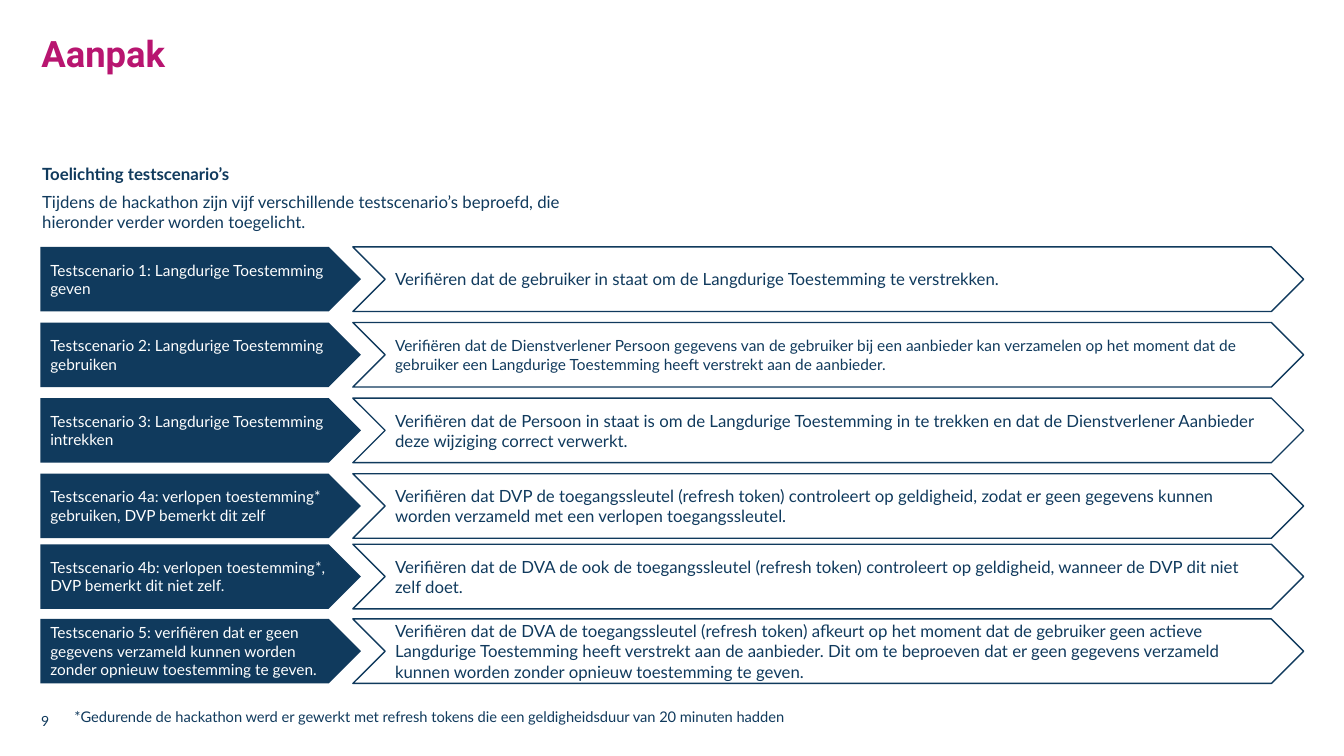
from dataclasses import dataclass

import pptx
import pptx.dml.color
import pptx.enum.shapes
import pptx.enum.text
import pptx.util

ANCHOR = pptx.enum.text.MSO_ANCHOR
SHAPE = pptx.enum.shapes.MSO_SHAPE


@dataclass(frozen=True)
class Theme:
    navy: str = "103A5D"
    magenta: str = "B81570"
    white: str = "FFFFFF"
    heading_font: str = "Roboto"
    body_font: str = "Lato"
    title_size: float = 26
    body_size: float = 12
    label_size: float = 11
    note_size: float = 10.5
    number_size: float = 10


@dataclass(frozen=True)
class Box:
    left: int
    top: int
    width: int
    height: int


@dataclass(frozen=True)
class Scenario:
    top: int
    label: str
    goal: str
    goal_size: float


THEME = Theme()
EMU_PER_PX = 9144
LABEL_LEFT, LABEL_WIDTH = 40, 318
GOAL_LEFT, GOAL_WIDTH = 350, 943
ROW_HEIGHT = 64

SCENARIOS = [
    Scenario(
        245,
        "Testscenario 1: Langdurige Toestemming geven",
        "Verifiëren dat de gebruiker in staat om de Langdurige Toestemming te verstrekken.",
        THEME.body_size,
    ),
    Scenario(
        320,
        "Testscenario 2: Langdurige Toestemming gebruiken",
        "Verifiëren dat de Dienstverlener Persoon gegevens van de gebruiker bij een aanbieder kan "
        "verzamelen op het moment dat de gebruiker een Langdurige Toestemming heeft verstrekt aan de aanbieder.",
        THEME.label_size,
    ),
    Scenario(
        395,
        "Testscenario 3: Langdurige Toestemming intrekken",
        "Verifiëren dat de Persoon in staat is om de Langdurige Toestemming in te trekken en dat de "
        "Dienstverlener Aanbieder deze wijziging correct verwerkt.",
        THEME.body_size,
    ),
    Scenario(
        470,
        "Testscenario 4a: verlopen toestemming* gebruiken, DVP bemerkt dit zelf",
        "Verifiëren dat DVP de toegangssleutel (refresh token) controleert op geldigheid, zodat er geen "
        "gegevens kunnen worden verzameld met een verlopen toegangssleutel.",
        THEME.body_size,
    ),
    Scenario(
        540,
        "Testscenario 4b: verlopen toestemming*, DVP bemerkt dit niet zelf.",
        "Verifiëren dat de DVA de ook de toegangssleutel (refresh token) controleert op geldigheid, "
        "wanneer de DVP dit niet zelf doet.",
        THEME.body_size,
    ),
    Scenario(
        614,
        "Testscenario 5: verifiëren dat er geen gegevens verzameld kunnen worden zonder opnieuw "
        "toestemming te geven.",
        "Verifiëren dat de DVA de toegangssleutel (refresh token) afkeurt op het moment dat de gebruiker "
        "geen actieve Langdurige Toestemming heeft verstrekt aan de aanbieder. Dit om te beproeven dat er "
        "geen gegevens verzameld kunnen worden zonder opnieuw toestemming te geven.",
        THEME.body_size,
    ),
]


def px(length: int) -> pptx.util.Emu:
    return pptx.util.Emu(length * EMU_PER_PX)


def rgb(color: str) -> pptx.dml.color.RGBColor:
    return pptx.dml.color.RGBColor.from_string(color)


def place(box: Box) -> tuple:
    return px(box.left), px(box.top), px(box.width), px(box.height)


def write(paragraph, text: str, *, size: float, color: str = THEME.navy,
          font: str = THEME.body_font, bold: bool = False,
          space_after: float = 0, line_spacing: float = 1.0) -> None:
    paragraph.alignment = pptx.enum.text.PP_ALIGN.LEFT
    paragraph.space_after = pptx.util.Pt(space_after)
    paragraph.line_spacing = line_spacing
    run = paragraph.add_run()
    run.text = text
    run.font.name = font
    run.font.size = pptx.util.Pt(size)
    run.font.bold = bold
    run.font.color.rgb = rgb(color)


def add_title(slide, box: Box, text: str) -> None:
    title = slide.shapes.title
    title.left, title.top, title.width, title.height = place(box)
    frame = title.text_frame
    frame.auto_size = pptx.enum.text.MSO_AUTO_SIZE.NONE
    frame.vertical_anchor = ANCHOR.TOP
    write(frame.paragraphs[0], text, size=THEME.title_size, color=THEME.magenta,
          font=THEME.heading_font, bold=True, line_spacing=0.9)


def add_text_frame(slide, box: Box, anchor=ANCHOR.TOP, wrap: bool = True):
    frame = slide.shapes.add_textbox(*place(box)).text_frame
    frame.word_wrap = wrap
    frame.vertical_anchor = anchor
    return frame


def add_arrow(slide, kind, box: Box, text: str, *, size: float, color: str, filled: bool) -> None:
    arrow = slide.shapes.add_shape(kind, *place(box))
    arrow.shadow.inherit = False
    if filled:
        arrow.fill.solid()
        arrow.fill.fore_color.rgb = rgb(THEME.navy)
        arrow.line.fill.background()
    else:
        arrow.fill.background()
        arrow.line.color.rgb = rgb(THEME.navy)
        arrow.line.width = pptx.util.Pt(1)
    frame = arrow.text_frame
    frame.word_wrap = True
    frame.vertical_anchor = ANCHOR.MIDDLE
    frame.margin_top = frame.margin_bottom = 0
    write(frame.paragraphs[0], text, size=size, color=color)


def add_scenario(slide, scenario: Scenario) -> None:
    add_arrow(slide, SHAPE.PENTAGON, Box(LABEL_LEFT, scenario.top, LABEL_WIDTH, ROW_HEIGHT),
              scenario.label, size=THEME.label_size, color=THEME.white, filled=True)
    add_arrow(slide, SHAPE.CHEVRON, Box(GOAL_LEFT, scenario.top, GOAL_WIDTH, ROW_HEIGHT),
              scenario.goal, size=scenario.goal_size, color=THEME.navy, filled=False)


def main() -> None:
    presentation = pptx.Presentation()
    presentation.slide_width, presentation.slide_height = px(1333), px(750)
    slide = presentation.slides.add_slide(presentation.slide_layouts.get_by_name("Title Only"))

    add_title(slide, Box(31, 31, 1270, 106), "Aanpak")
    intro = add_text_frame(slide, Box(32, 157, 586, 519))
    write(intro.paragraphs[0], "Toelichting testscenario’s",
          size=THEME.body_size, bold=True, space_after=6)
    write(intro.add_paragraph(),
          "Tijdens de hackathon zijn vijf verschillende testscenario’s beproefd, "
          "die hieronder verder worden toegelicht.",
          size=THEME.body_size, space_after=6)
    page_number = add_text_frame(slide, Box(31, 695, 300, 40), ANCHOR.MIDDLE)
    write(page_number.paragraphs[0], "9", size=THEME.number_size)

    for scenario in SCENARIOS:
        add_scenario(slide, scenario)

    footnote = add_text_frame(slide, Box(64, 697, 741, 28), wrap=False)
    footnote.auto_size = pptx.enum.text.MSO_AUTO_SIZE.SHAPE_TO_FIT_TEXT
    write(footnote.paragraphs[0],
          "*Gedurende de hackathon werd er gewerkt met refresh tokens "
          "die een geldigheidsduur van 20 minuten hadden",
          size=THEME.note_size)

    presentation.save("out.pptx")


if __name__ == "__main__":
    main()
